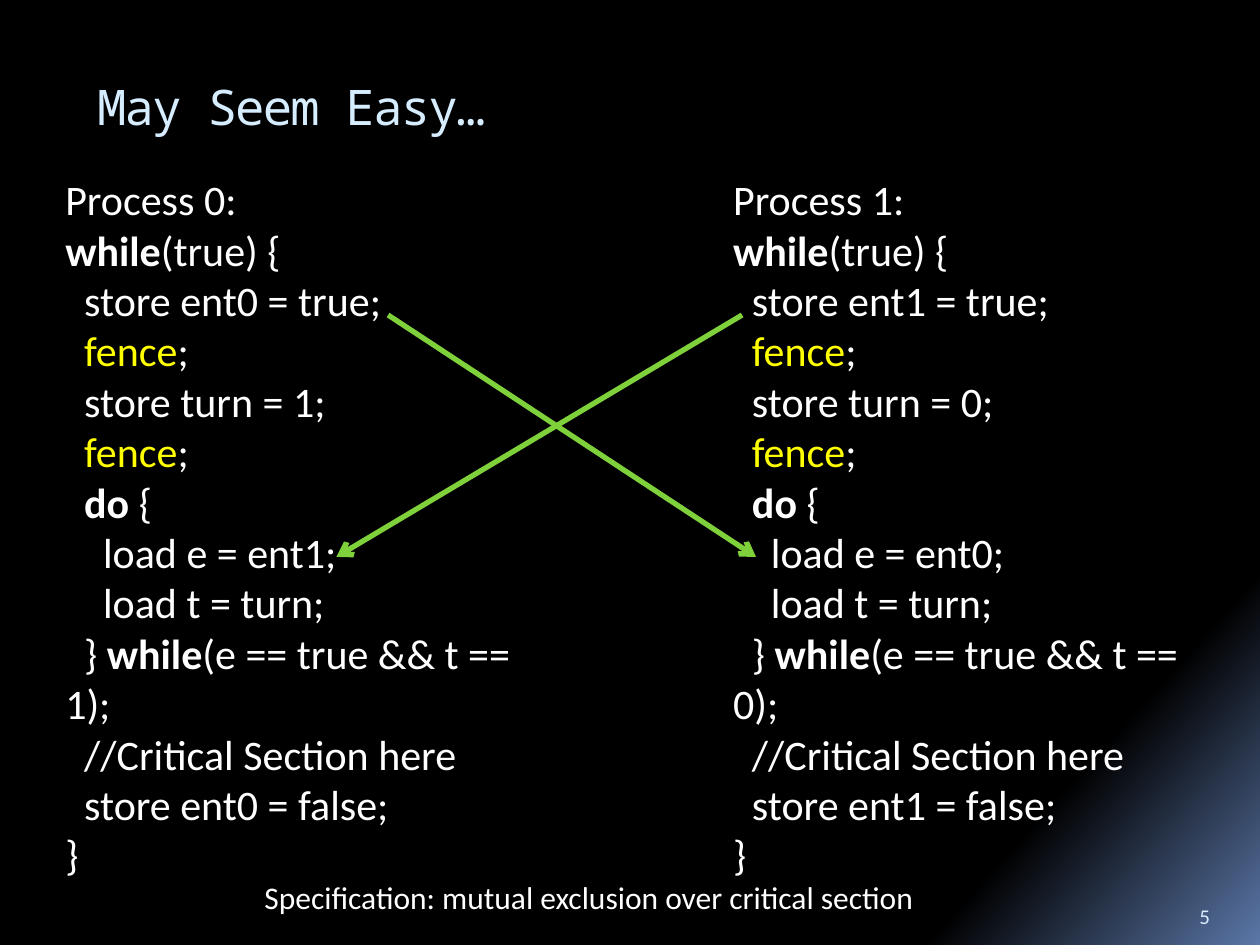
from lxml.etree import SubElement
from pptx import Presentation
from pptx.dml.color import RGBColor
from pptx.enum.shapes import MSO_CONNECTOR
from pptx.enum.text import MSO_ANCHOR, PP_ALIGN
from pptx.oxml.ns import qn
from pptx.util import Inches, Pt

TITLE = "May Seem Easy…"
GOAL = "Specification: mutual exclusion over critical section"
PAGE = "5"
CODE = [
    (0, [("Process {me}:", "")]),
    (0, [("while", "bold"), ("(true) {{", "")]),
    (1, [("store ent{me} = true;", "")]),
    (1, [("fence", "mark"), (";", "")]),
    (1, [("store turn = {peer};", "")]),
    (1, [("fence", "mark"), (";", "")]),
    (1, [("do ", "bold"), ("{{", "")]),
    (2, [("load e = ent{peer};", "")]),
    (2, [("load t = turn;", "")]),
    (1, [("}} ", ""), ("while", "bold"), ("(e == true && t == {peer});", "")]),
    (1, [("//Critical Section here", "")]),
    (1, [("store ent{me} = false;", "")]),
    (0, [("}}", "")]),
]
COLUMNS = [(0, 1, 0.42), (1, 0, 5.72)]
ARROWS = [((3.08, 2.5), (6, 4.42)), ((5.89, 2.5), (2.67, 4.42))]
WHITE, PALE, YELLOW, GREEN = "FFFFFF", "D6ECFF", "FFFF00", "7FD13B"
STEP = 0.15


def color(code):
    return RGBColor.from_string(code)


def style(run, size, code, face="Calibri", bold=False):
    font = run.font
    font.size, font.name, font.bold = Pt(size), face, bold
    font.color.rgb = color(code)


def place(shape, left, top, width, height):
    shape.left, shape.top = Inches(left), Inches(top)
    shape.width, shape.height = Inches(width), Inches(height)


def add_box(slide, left, top, width, height):
    box = slide.shapes.add_textbox(*map(Inches, (left, top, width, height)))
    box.text_frame.word_wrap = True
    return box.text_frame


def add_label(slide, text, area, size, code):
    frame = add_box(slide, *area)
    frame.text = text
    style(frame.paragraphs[0].runs[0], size, code)
    return frame


def add_code(slide, me, peer, left):
    frame = add_box(slide, left, 1.33, 4.1, 5.7)
    for row, (depth, parts) in enumerate(CODE):
        para = frame.add_paragraph() if row else frame.paragraphs[0]
        para._p.get_or_add_pPr().set("indent", str(Inches(depth * STEP)))
        for text, kind in parts:
            run = para.add_run()
            run.text = text.format(me=me, peer=peer)
            hue = YELLOW if kind == "mark" else WHITE
            style(run, 24, hue, bold=kind == "bold")


def add_arrow(slide, start, end):
    line = slide.shapes.add_connector(
        MSO_CONNECTOR.STRAIGHT, *map(Inches, start + end))
    line.line.color.rgb = color(GREEN)
    line.line.width = Pt(3)
    SubElement(line.line._get_or_add_ln(), qn("a:tailEnd"), type="arrow")
    SubElement(line._element.spPr, qn("a:effectLst"))


def add_title(slide):
    title = slide.shapes.title
    place(title, 0.67, 0.56, 8.67, 1)
    frame = title.text_frame
    frame.text = TITLE
    frame.vertical_anchor = MSO_ANCHOR.TOP
    para = frame.paragraphs[0]
    para.alignment = PP_ALIGN.LEFT
    run = para.runs[0]
    style(run, 28, PALE, "Noto Sans Mono")
    run.font._element.set("spc", "-100")


def paint(slide):
    fill = slide.background.fill
    fill.gradient()
    fill.gradient_angle = 360 - 42
    for stop, (spot, code) in zip(
            fill.gradient_stops, [(0.84, "000000"), (1, "5B77A8")]):
        stop.position = spot
        stop.color.rgb = color(code)


def main():
    deck = Presentation()
    deck.slide_width, deck.slide_height = Inches(10), Inches(7.5)
    slide = deck.slides.add_slide(deck.slide_layouts[5])
    paint(slide)
    add_title(slide)
    for start, end in ARROWS:
        add_arrow(slide, start, end)
    add_label(slide, GOAL, (2, 6.92, 5.49, 0.4), 18, WHITE)
    for me, peer, left in COLUMNS:
        add_code(slide, me, peer, left)
    page = add_label(slide, PAGE, (9.42, 7.02, 0.5, 0.4), 12, PALE)
    page.vertical_anchor = MSO_ANCHOR.BOTTOM
    deck.save("out.pptx")


if __name__ == "__main__":
    main()
